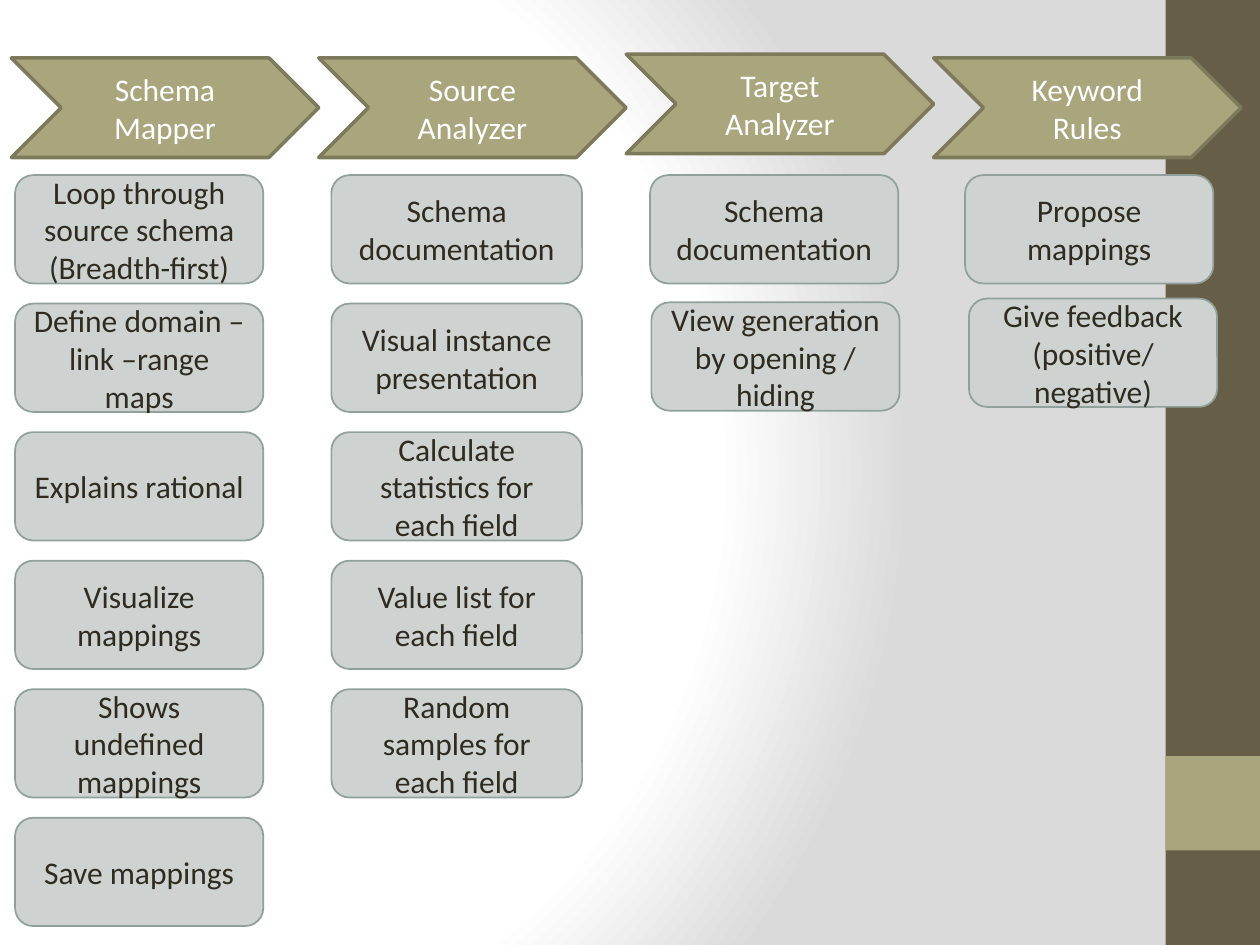
from dataclasses import dataclass

from pptx import Presentation
from pptx.dml.color import RGBColor
from pptx.enum import shapes, text
from pptx.oxml import parse_xml
from pptx.oxml.ns import nsdecls
from pptx.util import Inches, Pt


@dataclass(frozen=True)
class Theme:
    font: str = "Calibri"
    size: int = 18
    ink: str = "2F2B20"
    light: str = "FFFFFF"
    shade: str = "DADADA"
    brown: str = "675E47"
    olive: str = "A9A57C"
    olive_edge: str = "7D7A5C"
    mist: str = "CED3D1"
    mist_edge: str = "91A09A"


@dataclass(frozen=True)
class Component:
    name: str
    tasks: tuple
    left: float
    width: float = 1.97
    step: float = 1.02
    drift: float = 0
    header_top: float = 0.46


class SlideBuilder:
    def __init__(self, slide, theme):
        self.slide = slide
        self.theme = theme

    def background(self):
        stops = "".join(
            f'<a:gs pos="{position}"><a:srgbClr val="{color}"/></a:gs>'
            for position, color in (
                (0, self.theme.light),
                (75000, self.theme.light),
                (100000, self.theme.shade),
            )
        )
        self.slide.element.cSld.insert(0, parse_xml(
            f'<p:bg {nsdecls("p", "a")}><p:bgPr><a:gradFill rotWithShape="1">'
            f'<a:gsLst>{stops}</a:gsLst><a:path path="circle">'
            '<a:fillToRect l="20000" t="50000" r="100000" b="50000"/></a:path>'
            '</a:gradFill><a:effectLst/></p:bgPr></p:bg>'
        ))

    def block(self, preset, frame, fill, edge=None, weight=1):
        block = self.slide.shapes.add_shape(preset, *map(Inches, frame))
        block.shadow.inherit = False
        block.fill.solid()
        block.fill.fore_color.rgb = RGBColor.from_string(fill)
        if edge:
            block.line.color.rgb = RGBColor.from_string(edge)
            block.line.width = Pt(weight)
        else:
            block.line.fill.background()
        return block

    def label(self, block, words, color, margin=0.1):
        body = block.text_frame
        body.word_wrap = True
        body.vertical_anchor = text.MSO_ANCHOR.MIDDLE
        body.margin_left = body.margin_right = Inches(margin)
        paragraph = body.paragraphs[0]
        paragraph.alignment = text.PP_ALIGN.CENTER
        run = paragraph.add_run()
        run.text = words
        run.font.name = self.theme.font
        run.font.size = Pt(self.theme.size)
        run.font.color.rgb = RGBColor.from_string(color)

    def band(self, top, height, fill):
        self.block(shapes.MSO_SHAPE.RECTANGLE, (9.25, top, 0.75, height), fill)

    def task(self, words, frame):
        card = self.block(shapes.MSO_SHAPE.ROUNDED_RECTANGLE, frame,
                          self.theme.mist, self.theme.mist_edge)
        self.label(card, words, self.theme.ink)

    def header(self, words, frame):
        chevron = self.block(shapes.MSO_SHAPE.CHEVRON, frame,
                             self.theme.olive, self.theme.olive_edge, 2)
        self.label(chevron, words, self.theme.light, margin=0.15)


COMPONENTS = (
    Component("Schema Mapper", (
        "Loop through source schema (Breadth-first)",
        "Define domain –link –range maps",
        "Explains rational",
        "Visualize mappings",
        "Shows undefined mappings",
        "Save mappings",
    ), left=0.12),
    Component("Source Analyzer", (
        "Schema documentation",
        "Visual instance presentation",
        "Calculate statistics for each field",
        "Value list for each field",
        "Random samples for each field",
    ), left=2.63, width=1.99),
    Component("Target Analyzer", (
        "Schema documentation",
        "View generation by opening / hiding",
    ), left=5.16, step=1.01, drift=0.01, header_top=0.43),
    Component("Keyword Rules", (
        "Propose mappings",
        "Give feedback (positive/ negative)",
    ), left=7.66, step=0.98, drift=0.03),
)


def main():
    deck = Presentation()
    deck.slide_width, deck.slide_height = Inches(10), Inches(7.5)
    theme = Theme()
    builder = SlideBuilder(deck.slides.add_slide(deck.slide_layouts[6]), theme)
    builder.background()
    builder.band(0, 7.5, theme.brown)
    builder.band(6, 0.75, theme.olive)
    for component in COMPONENTS:
        for row, words in enumerate(component.tasks):
            builder.task(words, (component.left + row * component.drift,
                                 1.39 + row * component.step,
                                 component.width, 0.86))
    for column, component in enumerate(COMPONENTS):
        builder.header(component.name,
                       (0.09 + column * 2.44, component.header_top, 2.44, 0.79))
    deck.save("out.pptx")


if __name__ == "__main__":
    main()
